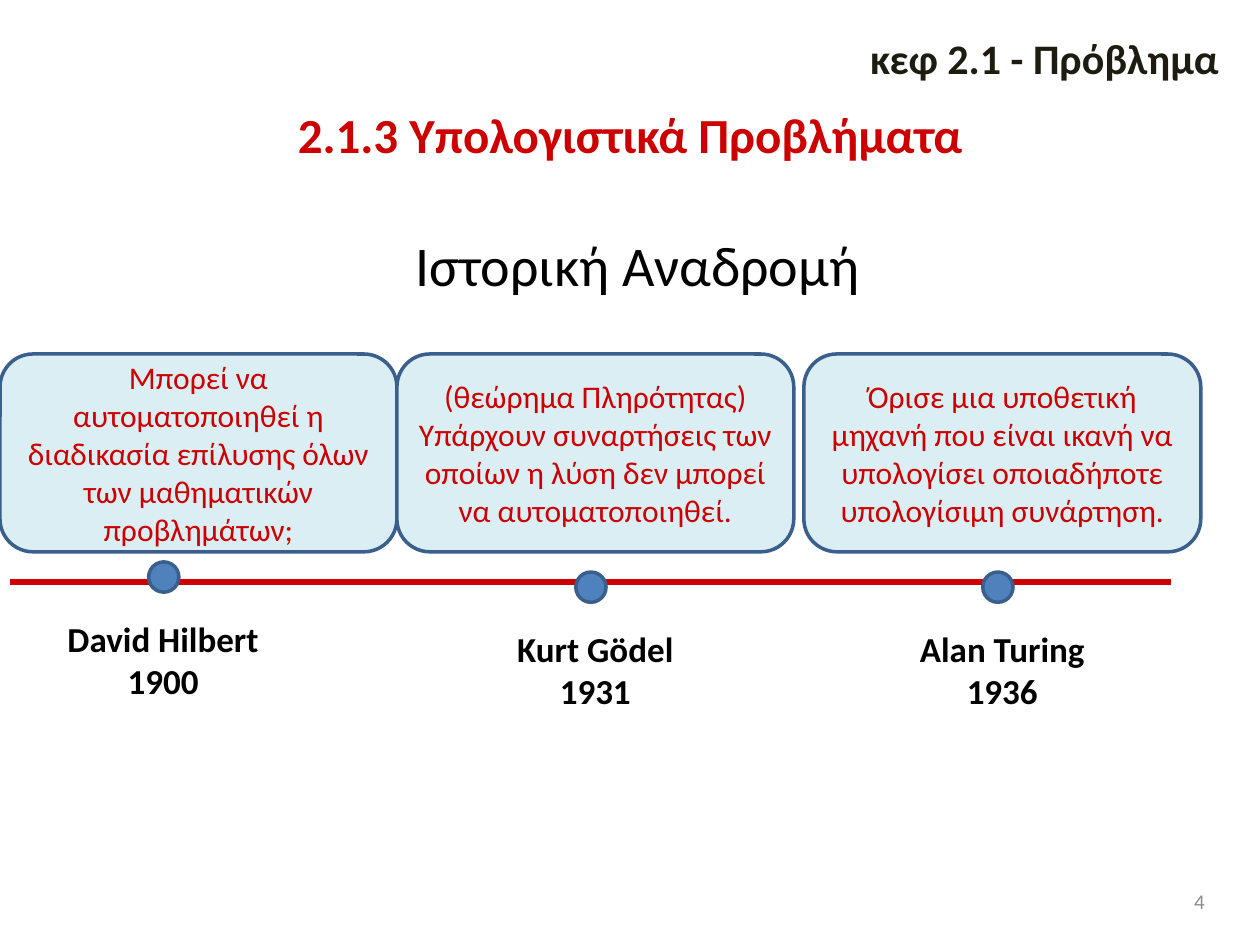
from dataclasses import dataclass

from lxml import etree
from pptx import Presentation
from pptx import util as u
from pptx.dml.color import RGBColor
from pptx.enum import shapes, text
from pptx.oxml import ns

COLORS = {
    "red": "CC0000",
    "black": "000000",
    "dark": "1E1C11",
    "gray": "8C8C8C",
    "card": "DBEEF4",
    "dot": "4F81BD",
    "outline": "3A5F8C",
}
FONT = "Calibri"
CARD_TOP, CARD_WIDTH, CARD_HEIGHT = 2.81, 3.15, 1.57
DOT_SIZE = 0.24
LABEL_DROP, LABEL_HEIGHT = 0.39, 0.77
CENTER = text.PP_ALIGN.CENTER
RIGHT = text.PP_ALIGN.RIGHT
MIDDLE = text.MSO_ANCHOR.MIDDLE
TOP = text.MSO_ANCHOR.TOP


@dataclass
class Area:
    left: float
    top: float
    width: float
    height: float

    def lengths(self) -> list:
        return [u.Inches(n) for n in (self.left, self.top, self.width, self.height)]


@dataclass
class Milestone:
    idea: str
    label: list[str]
    card_left: float
    dot_left: float
    dot_top: float
    label_left: float
    label_width: float


MILESTONES = [
    Milestone(
        "Μπορεί να αυτοματοποιηθεί η διαδικασία επίλυσης όλων των μαθηματικών προβλημάτων;",
        ["David Hilbert", "1900"], 0, 1.18, 4.46, 0.31, 1.97,
    ),
    Milestone(
        "(θεώρημα Πληρότητας) Υπάρχουν συναρτήσεις των οποίων η λύση δεν μπορεί να αυτοματοποιηθεί.",
        ["Kurt Gödel 1931"], 3.15, 4.57, 4.54, 3.94, 1.57,
    ),
    Milestone(
        "Όρισε μια υποθετική μηχανή που είναι ικανή να υπολογίσει οποιαδήποτε υπολογίσιμη συνάρτηση.",
        ["Alan Turing", "1936"], 6.38, 7.8, 4.54, 7.01, 1.89,
    ),
]


def color(name: str) -> RGBColor:
    return RGBColor.from_string(COLORS[name])


def write(shape, lines: list[str], size: int, ink: str, bold: bool = False,
          align=CENTER, anchor=TOP) -> None:
    frame = shape.text_frame
    frame.word_wrap = True
    frame.auto_size = text.MSO_AUTO_SIZE.NONE
    frame.vertical_anchor = anchor
    frame.text = "\n".join(lines)
    for paragraph in frame.paragraphs:
        paragraph.alignment = align
        paragraph.font.name = FONT
        paragraph.font.size = u.Pt(size)
        paragraph.font.bold = bold
        paragraph.font.color.rgb = color(ink)


def add_text(page, area: Area, lines: list[str], size: int, ink: str, **style) -> None:
    write(page.shapes.add_textbox(*area.lengths()), lines, size, ink, **style)


def add_outlined(page, kind, area: Area, fill: str):
    shape = page.shapes.add_shape(kind, *area.lengths())
    shape.shadow.inherit = False
    shape.fill.solid()
    shape.fill.fore_color.rgb = color(fill)
    shape.line.color.rgb = color("outline")
    shape.line.width = u.Pt(2)
    return shape


def add_axis(page, left: float, right: float, height: float) -> None:
    axis = page.shapes.add_connector(
        shapes.MSO_CONNECTOR.STRAIGHT,
        u.Inches(left), u.Inches(height), u.Inches(right), u.Inches(height),
    )
    axis.line.color.rgb = color("red")
    axis.line.width = u.Pt(3)
    etree.SubElement(axis._element.spPr, ns.qn("a:effectLst"))


def add_milestone(page, item: Milestone) -> None:
    dot = Area(item.dot_left, item.dot_top, DOT_SIZE, DOT_SIZE)
    add_outlined(page, shapes.MSO_SHAPE.OVAL, dot, "dot")
    label = Area(item.label_left, item.dot_top + LABEL_DROP, item.label_width, LABEL_HEIGHT)
    add_text(page, label, item.label, 20, "black", bold=True)
    area = Area(item.card_left, CARD_TOP, CARD_WIDTH, CARD_HEIGHT)
    card = add_outlined(page, shapes.MSO_SHAPE.ROUNDED_RECTANGLE, area, "card")
    write(card, [item.idea], 18, "red", anchor=MIDDLE)


def main() -> None:
    deck = Presentation()
    deck.slide_width, deck.slide_height = u.Inches(10), u.Inches(7.5)
    page = deck.slides.add_slide(deck.slide_layouts[5])

    title = page.shapes.title
    title.left, title.top, title.width, title.height = Area(1.54, 0.44, 6.92, 1.25).lengths()
    write(title, ["2.1.3 Υπολογιστικά Προβλήματα"], 28, "red", bold=True, anchor=MIDDLE)

    add_text(page, Area(7.33, 6.95, 2.33, 0.4), ["4"], 12, "gray", align=RIGHT, anchor=MIDDLE)
    add_text(page, Area(0.75, 1.78, 8.62, 0.64), ["Ιστορική Αναδρομή"], 32, "black")
    add_text(page, Area(6.42, 0.21, 3.35, 0.5), ["κεφ 2.1 - Πρόβλημα"], 24, "dark",
             bold=True, align=RIGHT)
    add_axis(page, 0.08, 9.29, 4.62)
    for item in MILESTONES:
        add_milestone(page, item)
    deck.save("out.pptx")


if __name__ == "__main__":
    main()
